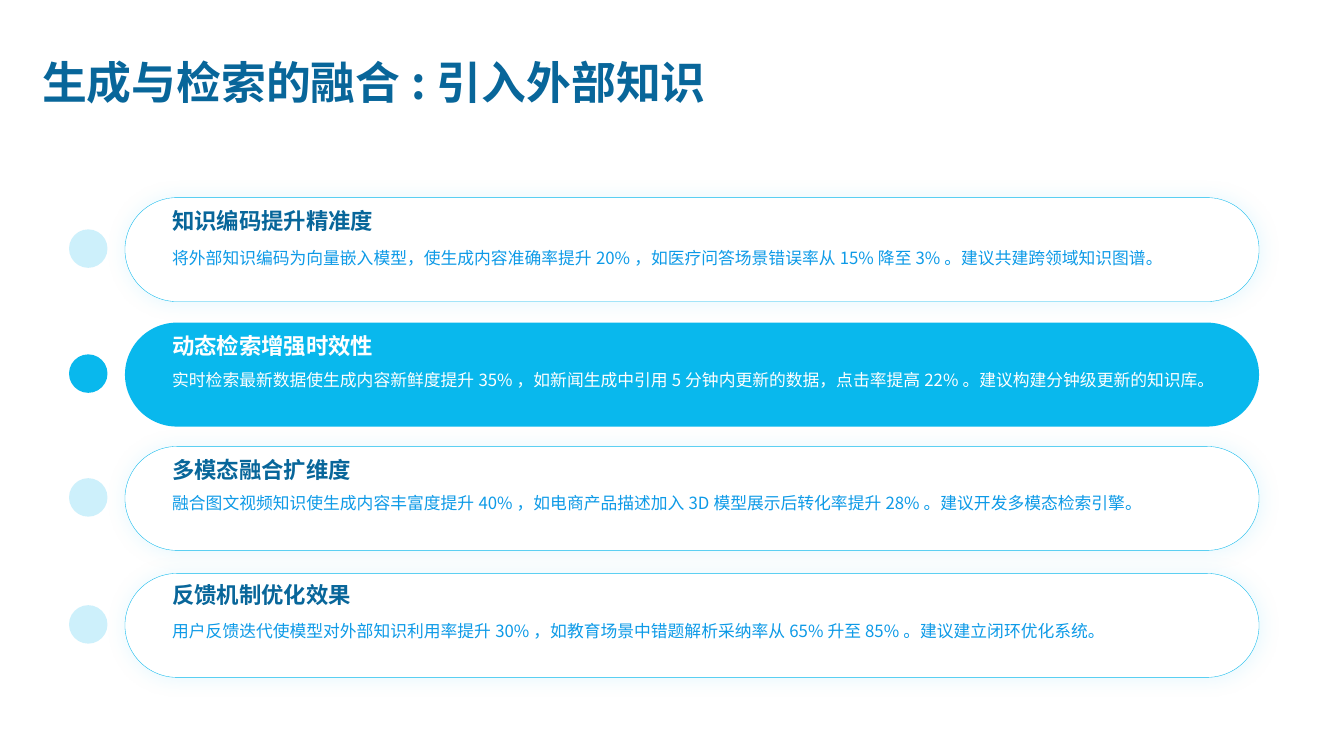
from lxml import etree
from pptx import Presentation
from pptx.dml.color import RGBColor
from pptx.enum.shapes import MSO_SHAPE
from pptx.enum.text import MSO_ANCHOR
from pptx.oxml.ns import qn
from pptx.util import Cm, Pt

ROUNDED = MSO_SHAPE.ROUNDED_RECTANGLE
OVAL = MSO_SHAPE.OVAL
TOP = MSO_ANCHOR.TOP
MIDDLE = MSO_ANCHOR.MIDDLE

FONT = "Noto Sans CJK SC"
COLORS = {"cyan": "09B8ED", "navy": "08669A", "blue": "0D9AE7", "white": "FFFFFF"}

ITEMS = [
    (4.98, 5.03, 6.1, False, "知识编码提升精准度",
     "将外部知识编码为向量嵌入模型，使生成内容准确率提升20%，如医疗问答场景错误率从15%降至3%。建议共建跨领域知识图谱。"),
    (8.13, 8.18, 9.17, True, "动态检索增强时效性",
     "实时检索最新数据使生成内容新鲜度提升35%，如新闻生成中引用5分钟内更新的数据，点击率提高22%。建议构建分钟级更新的知识库。"),
    (11.25, 11.3, 12.27, False, "多模态融合扩维度",
     "融合图文视频知识使生成内容丰富度提升40%，如电商产品描述加入3D模型展示后转化率提升28%。建议开发多模态检索引擎。"),
    (14.45, 14.45, 15.49, False, "反馈机制优化效果",
     "用户反馈迭代使模型对外部知识利用率提升30%，如教育场景中错题解析采纳率从65%升至85%。建议建立闭环优化系统。"),
]


class SlideBuilder:
    def __init__(self, slide):
        self.slide = slide

    def color(self, name):
        return RGBColor.from_string(COLORS[name])

    def set_alpha(self, color_element, percent):
        etree.SubElement(color_element, qn("a:alpha"), val=str(percent * 1000))

    def shape(self, kind, left, top, width, height, fill):
        shape = self.slide.shapes.add_shape(kind, Cm(left), Cm(top), Cm(width), Cm(height))
        shape.shadow.inherit = False
        shape.fill.solid()
        shape.fill.fore_color.rgb = self.color(fill)
        shape.line.fill.background()
        return shape

    def bar(self, top, highlighted):
        shape = self.shape(ROUNDED, 3.15, top, 28.58, 2.62, "cyan" if highlighted else "white")
        shape.adjustments[0] = 0.5
        if not highlighted:
            shape.line.color.rgb = self.color("cyan")
            shape.line.width = Pt(0.25)
            self.glow(shape)

    def glow(self, shape):
        effects = shape._element.spPr.find(qn("a:effectLst"))
        shadow = etree.SubElement(effects, qn("a:outerShdw"), blurRad=str(Pt(15)),
                                  dist="0", dir="0", algn="ctr", rotWithShape="0")
        color = etree.SubElement(shadow, qn("a:srgbClr"), val=COLORS["cyan"])
        self.set_alpha(color, 10)

    def dot(self, top, highlighted):
        shape = self.shape(OVAL, 1.74, top, 0.97, 0.97, "cyan")
        if not highlighted:
            fill = shape._element.spPr.find(qn("a:solidFill"))
            self.set_alpha(fill.find(qn("a:srgbClr")), 20)

    def text(self, left, top, width, height, words, size, color,
             bold=False, anchor=MIDDLE, spacing=1.0, after=0, inset=True):
        box = self.slide.shapes.add_textbox(Cm(left), Cm(top), Cm(width), Cm(height))
        frame = box.text_frame
        frame.word_wrap = True
        frame.vertical_anchor = anchor
        if not inset:
            frame.margin_left = frame.margin_right = 0
            frame.margin_top = frame.margin_bottom = 0
        paragraph = frame.paragraphs[0]
        paragraph.line_spacing = spacing
        paragraph.space_after = Pt(after)
        run = paragraph.add_run()
        run.text = words
        run.font.size = Pt(size)
        run.font.bold = bold
        run.font.color.rgb = self.color(color)
        run.font.name = FONT
        etree.SubElement(run.font._element, qn("a:ea"), typeface=FONT)

    def item(self, bar_top, heading_top, body_top, highlighted, heading, body):
        self.bar(bar_top, highlighted)
        self.dot(bar_top + 0.8, highlighted)
        self.text(4.34, heading_top, 19.71, 1.04, heading, 16,
                  "white" if highlighted else "navy", bold=True, inset=False)
        self.text(4.34, body_top, 26.39, 1.27, body, 12,
                  "white" if highlighted else "blue",
                  anchor=TOP, spacing=1.3, after=3, inset=False)


def main():
    presentation = Presentation()
    presentation.slide_width = Cm(33.87)
    presentation.slide_height = Cm(19.05)
    builder = SlideBuilder(presentation.slides.add_slide(presentation.slide_layouts[6]))
    builder.text(0.81, 0.91, 30.71, 2.01, "生成与检索的融合:引入外部知识", 32, "navy",
                 bold=True, spacing=1.2)
    for item in ITEMS:
        builder.item(*item)
    presentation.save("out.pptx")


if __name__ == "__main__":
    main()
